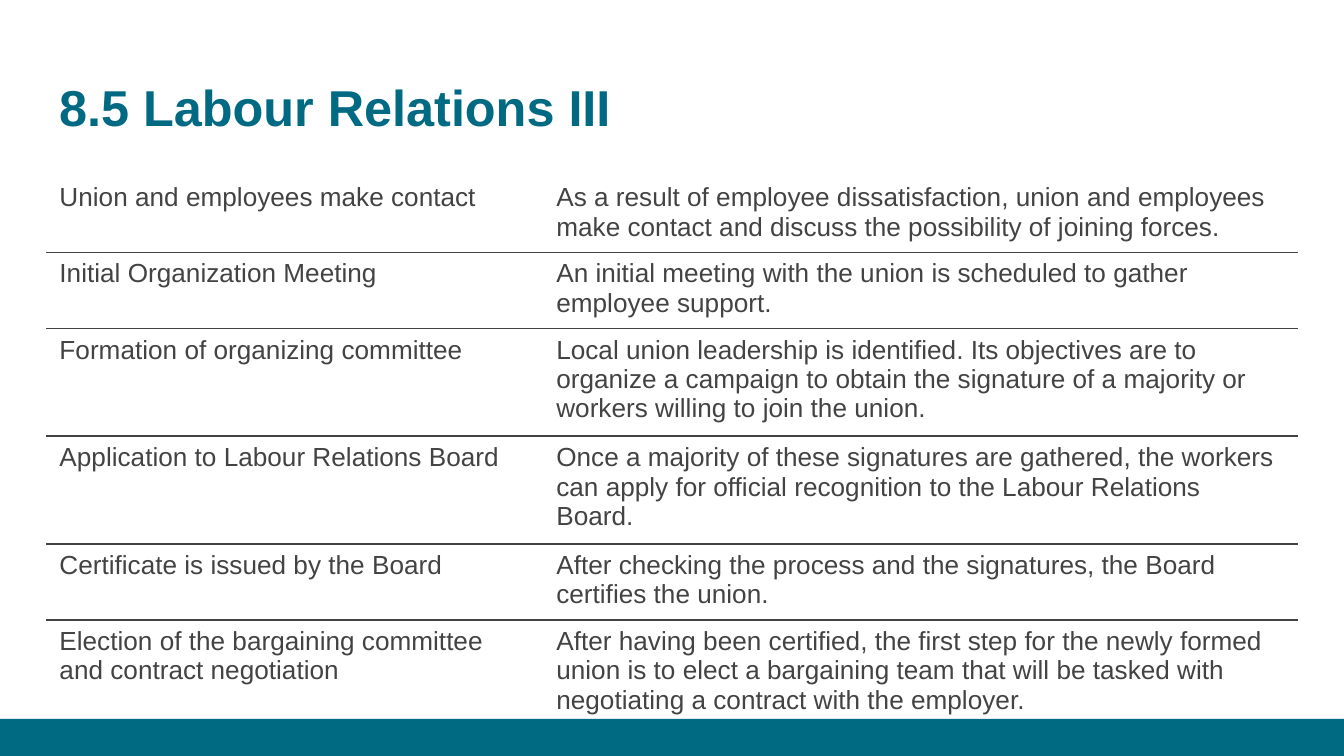
import pptx
import pptx.dml.color
import pptx.enum.shapes
import pptx.enum.text
import pptx.oxml
import pptx.oxml.ns
import pptx.util
from pptx.util import Cm

TEAL = pptx.dml.color.RGBColor(0x00, 0x6A, 0x83)
GREY = pptx.dml.color.RGBColor(0x43, 0x43, 0x43)
PLAIN_TABLE = "{2D5ABB26-0587-4C30-8999-92F81FD0307C}"

STEPS = [
    ("Union and employees make contact",
     "As a result of employee dissatisfaction, union and employees make contact "
     "and discuss the possibility of joining forces."),
    ("Initial Organization Meeting",
     "An initial meeting with the union is scheduled to gather employee support."),
    ("Formation of organizing committee",
     "Local union leadership is identified. Its objectives are to organize a campaign "
     "to obtain the signature of a majority or workers willing to join the union."),
    ("Application to Labour Relations Board",
     "Once a majority of these signatures are gathered, the workers can apply for "
     "official recognition to the Labour Relations Board."),
    ("Certificate is issued by the Board",
     "After checking the process and the signatures, the Board certifies the union."),
    ("Election of the bargaining committee and contract negotiation",
     "After having been certified, the first step for the newly formed union is to elect "
     "a bargaining team that will be tasked with negotiating a contract with the employer."),
]


class SlideBuilder:
    title_format = {"name": "Arial", "size": pptx.util.Pt(27), "bold": True}
    body_format = {"name": "Arial", "size": pptx.util.Pt(14), "bold": False}
    rule_width = pptx.util.Pt(1)

    def __init__(self, slide):
        self.slide = slide

    def add_text(self, frame, text, font_format, color):
        run = frame.paragraphs[0].add_run()
        run.text = text
        for attribute, value in font_format.items():
            setattr(run.font, attribute, value)
        run.font.color.rgb = color

    def bar(self, left, top, width, height):
        band = self.slide.shapes.add_shape(
            pptx.enum.shapes.MSO_SHAPE.RECTANGLE, left, top, width, height)
        band.shadow.inherit = False
        band.fill.solid()
        band.fill.fore_color.rgb = TEAL
        band.line.fill.background()

    def title(self, text, left, top, width, height):
        frame = self.slide.shapes.add_textbox(left, top, width, height).text_frame
        layout = {"word_wrap": True,
                  "vertical_anchor": pptx.enum.text.MSO_ANCHOR.BOTTOM}
        layout.update((f"margin_{side}", Cm(0.25))
                      for side in ("left", "top", "right", "bottom"))
        for attribute, value in layout.items():
            setattr(frame, attribute, value)
        self.add_text(frame, text, self.title_format, TEAL)

    def rule(self, cell, edge):
        """Draw one cell border; edge is "lnT" or "lnB"."""
        cell._tc.get_or_add_tcPr().append(pptx.oxml.parse_xml(
            f'<a:{edge} {pptx.oxml.ns.nsdecls("a")} w="{self.rule_width}">'
            f'<a:solidFill><a:srgbClr val="{GREY}"/></a:solidFill></a:{edge}>'))

    def table(self, rows, left, top, column_widths, row_height):
        frame = self.slide.shapes.add_table(
            len(rows), len(column_widths), left, top,
            sum(column_widths), row_height * len(rows))
        table = frame.table
        table.first_row = table.horz_banding = False
        table._tbl.tblPr.find(pptx.oxml.ns.qn("a:tableStyleId")).text = PLAIN_TABLE
        for column, width in zip(table.columns, column_widths):
            column.width = width
        for row_index, texts in enumerate(rows):
            for column_index, text in enumerate(texts):
                cell = table.cell(row_index, column_index)
                if row_index > 0:
                    self.rule(cell, "lnT")
                if row_index < len(rows) - 1:
                    self.rule(cell, "lnB")
                cell.fill.background()
                self.add_text(cell.text_frame, text, self.body_format, GREY)


def main():
    deck = pptx.Presentation()
    deck.slide_width, deck.slide_height = Cm(25.4), Cm(14.29)
    builder = SlideBuilder(deck.slides.add_slide(deck.slide_layouts[6]))
    margin = Cm(0.87)
    bar_height = Cm(0.7)

    builder.bar(0, deck.slide_height - bar_height, deck.slide_width, bar_height)
    builder.title("8.5 Labour Relations III", margin, Cm(1.15),
                  deck.slide_width - 2 * margin, Cm(1.68))
    builder.table(STEPS, margin, Cm(3.33), [Cm(9.39), Cm(14.27)], Cm(1.04))
    deck.save("out.pptx")


if __name__ == "__main__":
    main()
